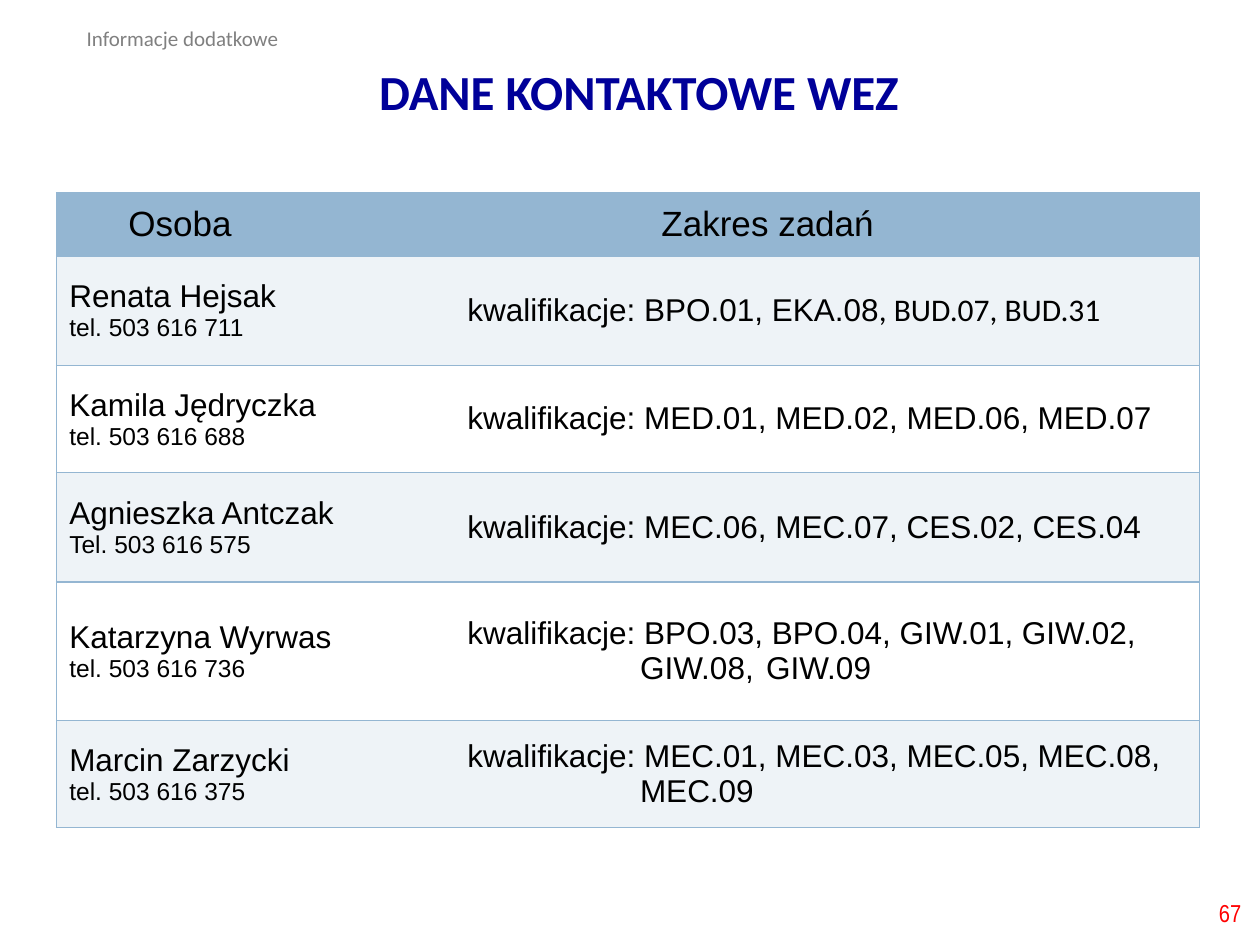
from lxml import etree
from pptx import Presentation
from pptx.dml.color import RGBColor
from pptx.enum.text import MSO_ANCHOR, PP_ALIGN
from pptx.oxml.ns import qn
from pptx.util import Inches, Pt

NAVY = RGBColor(0x00, 0x00, 0x99)
RED = RGBColor(0xFF, 0x00, 0x00)
GRAY = RGBColor(0x80, 0x80, 0x80)
BLACK = RGBColor(0x00, 0x00, 0x00)
WHITE = RGBColor(0xFF, 0xFF, 0xFF)
BLUE = RGBColor(0x94, 0xB6, 0xD2)
PALE = RGBColor(0xEE, 0xF3, 0xF7)

COLUMN_WIDTHS = [3.16, 5.91]
ROW_HEIGHTS = [0.5, 0.87, 0.85, 0.87, 1.1, 0.85]
HEADINGS = [("Osoba", 0.57), ("Zakres zadań", 1.64)]  # text, left margin
HANGING = 1.37
GAP_STOP = 3.04

# Name, phone, qualifications in Arial, qualifications in Calibri
CONTACTS = [
    ("Renata Hejsak", "tel. 503 616 711", "BPO.01, EKA.08", ", BUD.07, BUD.31"),
    ("Kamila Jędryczka", "tel. 503 616 688", "MED.01, MED.02, MED.06, MED.07", ""),
    ("Agnieszka Antczak", "Tel. 503 616 575", "MEC.06, MEC.07, CES.02, CES.04", ""),
    ("Katarzyna Wyrwas", "tel. 503 616 736",
     "BPO.03, BPO.04, GIW.01, GIW.02, GIW.08,\tGIW.09", ""),
    ("Marcin Zarzycki", "tel. 503 616 375",
     "MEC.01, MEC.03, MEC.05, MEC.08, MEC.09", ""),
]


def add_span(para, text, size, color=BLACK, name="Arial", bold=False):
    span = para.add_run()
    span.text = text
    span.font.color.rgb = color
    for key, value in {"size": Pt(size), "name": name, "bold": bold}.items():
        setattr(span.font, key, value)


def add_text(page, place, text, align, anchor, line_spacing=1.0, **style):
    box = page.shapes.add_textbox(*map(Inches, place))
    frame = box.text_frame
    for key, value in {"word_wrap": True, "vertical_anchor": anchor}.items():
        setattr(frame, key, value)
    para = frame.paragraphs[0]
    para.alignment = align
    para.line_spacing = line_spacing
    add_span(para, text, **style)


def format_cell(cell, fill, open_side):
    """Border three sides, leave the inner vertical side open, then fill."""
    properties = cell._tc.get_or_add_tcPr()
    for side in ("lnL", "lnR", "lnT", "lnB"):
        line = etree.SubElement(properties, qn(f"a:{side}"), w=str(Pt(1)))
        if side == open_side:
            etree.SubElement(line, qn("a:noFill"))
        else:
            solid = etree.SubElement(line, qn("a:solidFill"))
            etree.SubElement(solid, qn("a:srgbClr"), val=str(BLUE))
    cell.fill.solid()
    cell.fill.fore_color.rgb = fill
    cell.vertical_anchor = MSO_ANCHOR.MIDDLE


def hang_indent(para):
    properties = para._p.get_or_add_pPr()
    properties.set("marL", str(Inches(HANGING)))
    properties.set("indent", str(-Inches(HANGING)))
    # Stops counted from the indent and from the cell edge meet at one point
    stops = etree.SubElement(properties, qn("a:tabLst"))
    for stop in (GAP_STOP - HANGING, GAP_STOP):
        etree.SubElement(stops, qn("a:tab"), pos=str(Inches(stop)), algn="l")


def add_header(page):
    add_text(page, (0.59, 0.15, 2.67, 0.3), "Informacje dodatkowe", PP_ALIGN.LEFT,
             MSO_ANCHOR.TOP, size=12, color=GRAY, name="Calibri")
    add_text(page, (0.17, 0.5, 9.8, 0.5), "DANE KONTAKTOWE WEZ", PP_ALIGN.CENTER,
             MSO_ANCHOR.MIDDLE, 0.9, size=28, color=NAVY, name="Calibri", bold=True)


def add_contact_table(page, place):
    table = page.shapes.add_table(len(ROW_HEIGHTS), len(COLUMN_WIDTHS),
                                  *map(Inches, place)).table
    table.first_row = table.horz_banding = False
    for column, width in zip(table.columns, COLUMN_WIDTHS):
        column.width = Inches(width)
    for index, (row, height) in enumerate(zip(table.rows, ROW_HEIGHTS)):
        row.height = Inches(height)
        fill = BLUE if index == 0 else PALE if index % 2 else WHITE
        for cell, open_side in zip(row.cells, ("lnR", "lnL")):
            format_cell(cell, fill, open_side)

    # Heading row
    for cell, (heading, margin) in zip(table.rows[0].cells, HEADINGS):
        cell.margin_left = Inches(margin)
        add_span(cell.text_frame.paragraphs[0], heading, 20)

    # One row for each person
    for index, (person, phone, codes, more_codes) in enumerate(CONTACTS, 1):
        frame = table.cell(index, 0).text_frame
        add_span(frame.paragraphs[0], person, 18)
        add_span(frame.add_paragraph(), phone, 14)
        para = table.cell(index, 1).text_frame.paragraphs[0]
        if index > 3:
            hang_indent(para)
        add_span(para, f"kwalifikacje: {codes}", 18)
        if more_codes:
            add_span(para, more_codes, 18, name="Calibri")


def add_page_number(page):
    add_text(page, (7.7, 7.04, 2.25, 0.4), "67", PP_ALIGN.RIGHT,
             MSO_ANCHOR.MIDDLE, size=14, color=RED, name="Arial Narrow")


def main():
    deck = Presentation()
    deck.slide_width, deck.slide_height = Inches(10), Inches(7.5)
    page = deck.slides.add_slide(deck.slide_layouts[6])
    add_header(page)
    add_contact_table(page, (0.45, 1.53, sum(COLUMN_WIDTHS), sum(ROW_HEIGHTS)))
    add_page_number(page)
    deck.save("out.pptx")


if __name__ == "__main__":
    main()
